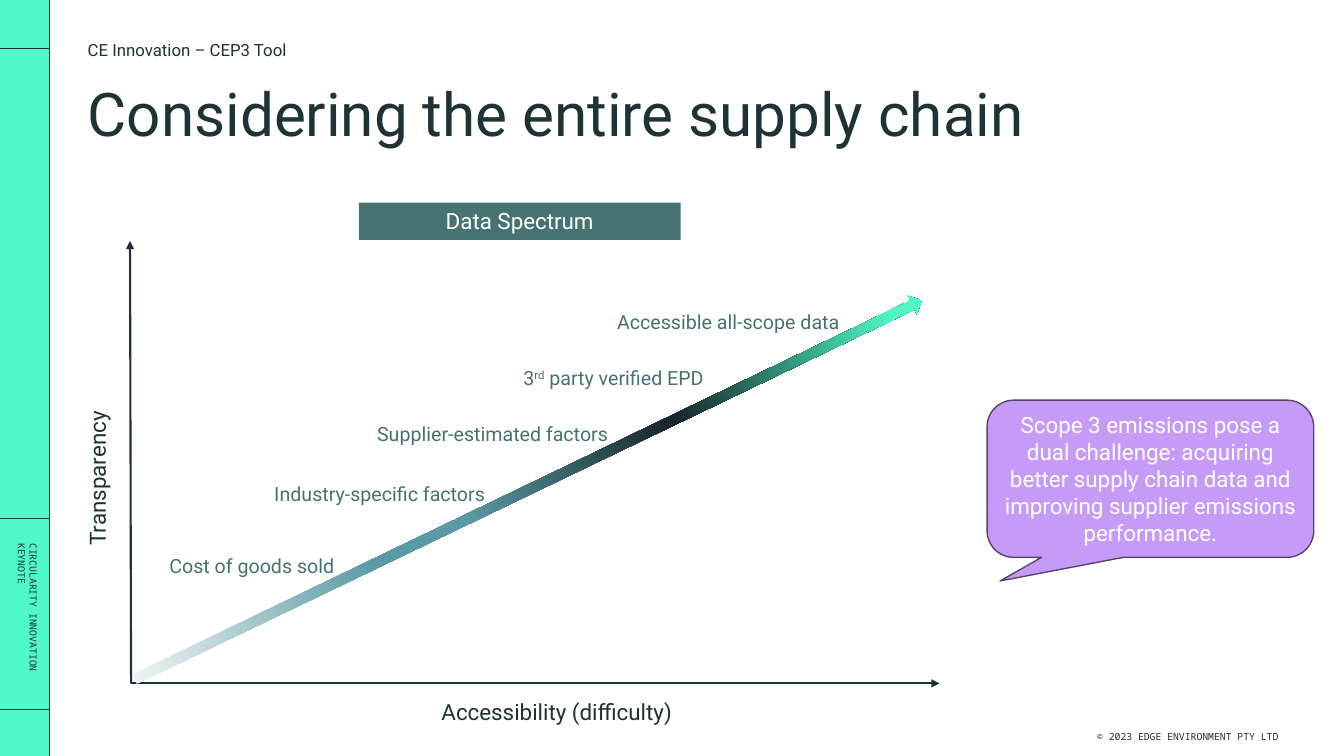
"""Build the supply chain data spectrum slide."""
import lxml.etree
import pptx
import pptx.dml.color
import pptx.enum.shapes
import pptx.enum.text
import pptx.oxml.ns
import pptx.util

Inches, Pt = pptx.util.Inches, pptx.util.Pt
ALIGN = pptx.enum.text.PP_ALIGN
ANCHOR = pptx.enum.text.MSO_ANCHOR
SHAPE = pptx.enum.shapes.MSO_SHAPE
COLOURS = {
    "ink": "1E3336", "teal": "467372", "mint": "50FAC7", "white": "FFFFFF",
    "lilac": "C69BF8", "plum": "57446D", "mist": "F1F7F7", "sea": "5B9AA4",
    "night": "172628",
}


def colour(name):
    """Return the named colour."""
    return pptx.dml.color.RGBColor.from_string(COLOURS[name])


def add_xml(parent, tag, **attributes):
    """Append a child element with the given attributes."""
    return lxml.etree.SubElement(parent, pptx.oxml.ns.qn(tag), attributes)


def write(shape, text, size=16, font="Roboto", ink="ink", align=ALIGN.LEFT,
          anchor=ANCHOR.TOP, inset=True, spacing=None, after=0):
    """Fill a shape with text; newlines split paragraphs, carets enclose superscript."""
    frame = shape.text_frame
    frame.word_wrap = True
    frame.auto_size = pptx.enum.text.MSO_AUTO_SIZE.NONE
    frame.vertical_anchor = anchor
    frame.margin_left = frame.margin_right = Inches(0.1 if inset else 0)
    frame.margin_top = frame.margin_bottom = Inches(0.05 if inset else 0)
    for index, line in enumerate(text.split("\n")):
        paragraph = frame.add_paragraph() if index else frame.paragraphs[0]
        paragraph.alignment = align
        paragraph.space_before, paragraph.space_after = Pt(0), Pt(after)
        paragraph.line_spacing = spacing
        for position, part in enumerate(line.split("^")):
            run = paragraph.add_run()
            run.text = part
            run.font.name, run.font.size = font, Pt(size)
            run.font.color.rgb = colour(ink)
            if position % 2:
                run.font._element.set("baseline", "30000")


class SlideBuilder:
    """Hold the slide and add styled elements to it."""

    def __init__(self, presentation):
        """Add a title-only slide."""
        self.slide = presentation.slides.add_slide(presentation.slide_layouts[5])

    def title(self, text, box, **style):
        """Place and format the title placeholder."""
        shape = self.slide.shapes.title
        shape.left, shape.top, shape.width, shape.height = map(Inches, box)
        write(shape, text, **style)

    def text(self, text, box, rotation=0, **style):
        """Add a text box."""
        shape = self.slide.shapes.add_textbox(*map(Inches, box))
        shape.rotation = rotation
        write(shape, text, **style)

    def shape(self, kind, box, fill=None, line=None):
        """Add a preset shape with an optional fill and outline."""
        shape = self.slide.shapes.add_shape(kind, *map(Inches, box))
        shape.shadow.inherit = False
        if fill:
            shape.fill.solid()
            shape.fill.fore_color.rgb = colour(fill)
        if line:
            shape.line.color.rgb = colour(line)
            shape.line.width = Pt(1)
        else:
            shape.line.fill.background()
        return shape

    def gradient_arrow(self, box, rotation, stops):
        """Add a rotated block arrow with a gradient along its length."""
        shape = self.shape(SHAPE.RIGHT_ARROW, box)
        shape.rotation = rotation
        shape.fill.gradient()
        shape.fill.gradient_angle = 0
        stop_list = next(shape._element.iter(pptx.oxml.ns.qn("a:gsLst")))
        for stop in list(stop_list):
            stop_list.remove(stop)
        for percent, name in stops:
            stop = add_xml(stop_list, "a:gs", pos=str(percent * 1000))
            add_xml(stop, "a:srgbClr", val=COLOURS[name])

    def line(self, start, end, width=0.25, arrow=False):
        """Add a straight line, with an arrowhead at its end if wanted."""
        connector = self.slide.shapes.add_connector(
            pptx.enum.shapes.MSO_CONNECTOR.STRAIGHT, *map(Inches, start + end))
        connector.line.color.rgb = colour("ink")
        connector.line.width = Pt(width)
        if arrow:
            add_xml(connector.line._get_or_add_ln(), "a:tailEnd", type="triangle")
        add_xml(connector._element.spPr, "a:effectLst")


def main():
    """Build and save the presentation."""
    presentation = pptx.Presentation()
    presentation.slide_width, presentation.slide_height = Inches(13.33), Inches(7.5)
    builder = SlideBuilder(presentation)

    bar_width = 0.49
    builder.shape(SHAPE.RECTANGLE, (0, 0, bar_width, 7.5), "mint")
    for top in (0.48, 5.14, 7.04):
        builder.line((0, top), (bar_width, top))
    builder.line((bar_width, 7.5), (bar_width, 0))
    builder.text("CIRCULARITY INNOVATION\nKEYNOTE", (-0.64, 5.98, 1.77, 0.39),
                 rotation=90, size=7, font="Noto Sans Mono")
    builder.text("© 2023 EDGE ENVIRONMENT PTY LTD", (9.55, 7.11, 3.13, 0.39),
                 size=7, font="Noto Sans Mono", align=ALIGN.RIGHT,
                 anchor=ANCHOR.MIDDLE, inset=False)

    builder.title("Considering the entire supply chain", (0.87, 0.87, 11.81, 1.1),
                  size=43, inset=False, spacing=0.85)
    builder.text("CE Innovation – CEP3 Tool", (0.87, 0.39, 4.76, 0.31),
                 size=12, inset=False, after=8)

    labels = [
        ("Cost of goods sold", 1.68, 5.43),
        ("Industry-specific factors", 2.72, 4.71),
        ("Supplier-estimated factors", 3.74, 4.12),
        ("3^rd^ party verified EPD", 5.19, 3.56),
        ("Accessible all-scope data", 6.12, 3.01),
    ]
    for label, left, top in labels:
        builder.text(label, (left, top, 2.9, 0.41), size=14, ink="teal",
                     inset=False, spacing=Pt(21.6), after=5)

    origin = (1.3, 6.78)
    for end in ((1.29, 2.39), (9.32, 6.78)):
        builder.line(origin, end, width=1.5, arrow=True)
    builder.text("Transparency", (-0.14, 4.22, 2.21, 0.37), rotation=270)
    builder.text("Accessibility (difficulty)", (4.28, 6.88, 2.68, 0.37))
    builder.gradient_arrow(
        (0.91, 4.76, 8.66, 0.2), 334.3,
        [(0, "mist"), (31, "sea"), (42, "sea"), (68, "night"), (96, "mint")])

    heading = builder.shape(SHAPE.RECTANGLE, (3.56, 2.01, 3.19, 0.37), "teal")
    write(heading, "Data Spectrum", ink="white", align=ALIGN.CENTER)

    callout = builder.shape(SHAPE.ROUNDED_RECTANGULAR_CALLOUT,
                            (9.79, 3.97, 3.24, 1.56), "lilac", "plum")
    for index, value in enumerate((-0.46, 0.65, 0.17)):
        callout.adjustments[index] = value
    write(callout, "Scope 3 emissions pose a dual challenge: acquiring better supply "
          "chain data and improving supplier emissions performance.",
          ink="white", align=ALIGN.CENTER, anchor=ANCHOR.MIDDLE)
    presentation.save("out.pptx")


if __name__ == "__main__":
    main()
